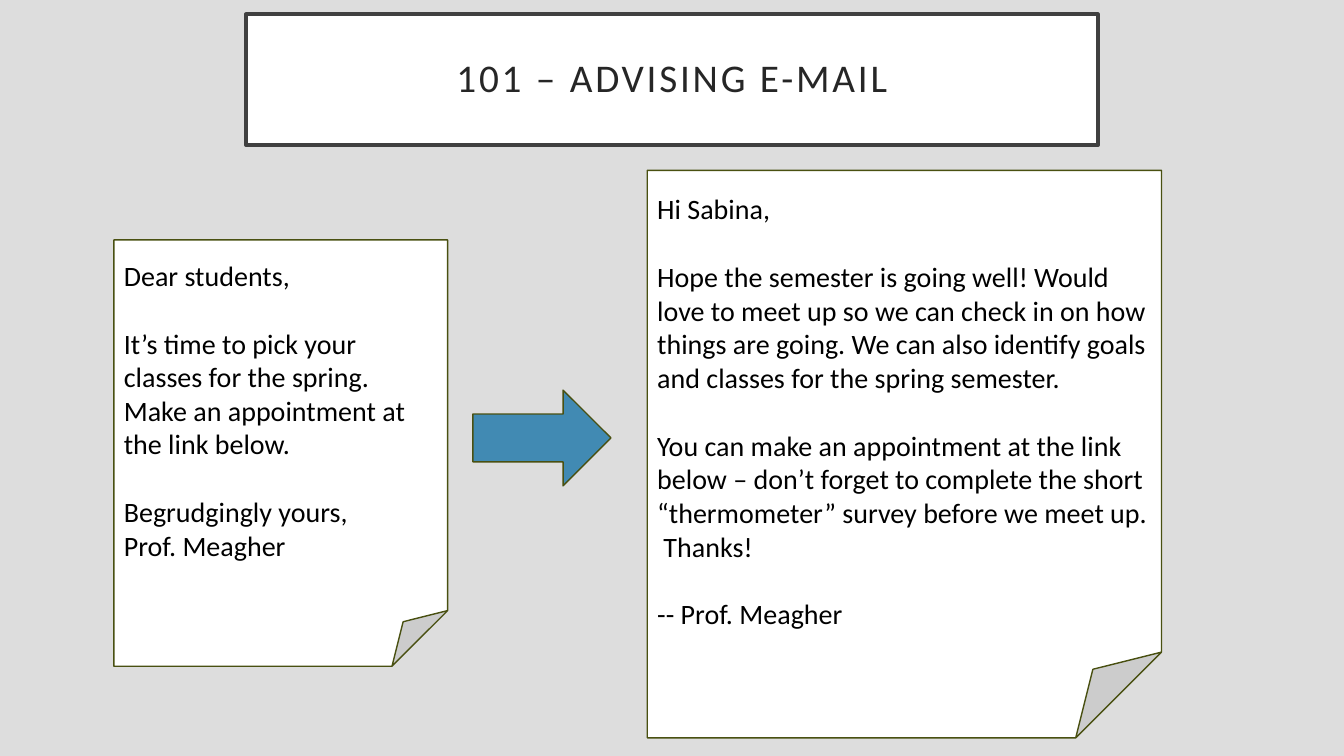
"""Build a slide that sets a curt advising e-mail beside a warm one."""
from dataclasses import dataclass

from pptx import Presentation
from pptx.dml.color import RGBColor
from pptx.enum.shapes import MSO_SHAPE
from pptx.enum.text import MSO_ANCHOR, MSO_AUTO_SIZE, PP_ALIGN
from pptx.util import Inches, Pt

NOTE = MSO_SHAPE.FOLDED_CORNER
ARROW = MSO_SHAPE.RIGHT_ARROW
MIDDLE = MSO_ANCHOR.MIDDLE
FIXED = MSO_AUTO_SIZE.NONE
LEFT = PP_ALIGN.LEFT
CENTER = PP_ALIGN.CENTER


@dataclass(frozen=True)
class Theme:
    back: str = "DDDDDD"
    paper: str = "FFFFFF"
    frame: str = "404040"
    edge: str = "495011"
    arrow: str = "418AB3"
    head: str = "262626"
    ink: str = "000000"
    font: str = "Calibri"
    title: int = 28
    body: int = 20
    gap: float = 24.4


theme = Theme()


def paint(shape, fill, line, width):
    shape.fill.solid()
    shape.fill.fore_color.rgb = RGBColor.from_string(fill)
    shape.line.color.rgb = RGBColor.from_string(line)
    shape.line.width = Pt(width)


def write(para, text, size, color, align):
    para.alignment = align
    run = para.add_run()
    run.text = text
    run.font.name = theme.font
    run.font.size = Pt(size)
    run.font.color.rgb = RGBColor.from_string(color)
    return run


deck = Presentation()
deck.slide_width = Inches(13.33)
deck.slide_height = Inches(7.5)
slide = deck.slides.add_slide(deck.slide_layouts[5])
slide.background.fill.solid()
slide.background.fill.fore_color.rgb = RGBColor.from_string(theme.back)

title = slide.shapes.title
title.left, title.top = Inches(2.44), Inches(0.14)
title.width, title.height = Inches(8.45), Inches(1.3)
paint(title, theme.paper, theme.frame, 2.5)
frame = title.text_frame
frame.word_wrap = True
frame.auto_size = FIXED
frame.vertical_anchor = MIDDLE
frame.margin_left = frame.margin_right = Inches(0.2)
frame.margin_top = frame.margin_bottom = Inches(0.2)
para = frame.paragraphs[0]
para.line_spacing = 0.9
run = write(para, "101 – ADVISING E-MAIL", theme.title, theme.head, CENTER)
run.font._element.set("spc", "200")

curt = [
    ["Dear students,"],
    ["It’s time to pick your classes for the spring. Make an appointment at the link below."],
    ["Begrudgingly yours,", "Prof. Meagher"],
]
warm = [
    ["Hi Sabina,"],
    ["Hope the semester is going well! Would love to meet up so we can check in on how "
     "things are going. We can also identify goals and classes for the spring semester."],
    ["You can make an appointment at the link below – don’t forget to complete the short "
     "“thermometer” survey before we meet up.  Thanks!"],
    ["-- Prof. Meagher"],
]
notes = [
    ((1.13, 2.38, 3.31, 4.23), 0.35, curt),
    ((6.42, 1.69, 5.1, 5.63), 0.05, warm),
]
for box, foot, blocks in notes:
    note = slide.shapes.add_shape(NOTE, *map(Inches, box))
    note.shadow.inherit = False
    paint(note, theme.paper, theme.edge, 1)
    frame = note.text_frame
    frame.word_wrap = True
    frame.vertical_anchor = MIDDLE
    frame.margin_bottom = Inches(foot)
    para = frame.paragraphs[0]
    for i, block in enumerate(blocks):
        for j, text in enumerate(block):
            if i or j:
                para = frame.add_paragraph()
            if i and not j:
                para.space_before = Pt(theme.gap)
            write(para, text, theme.body, theme.ink, LEFT)

arrow = slide.shapes.add_shape(ARROW, Inches(4.69), Inches(3.87), Inches(1.37), Inches(0.95))
arrow.shadow.inherit = False
paint(arrow, theme.arrow, theme.edge, 1)

deck.save("out.pptx")
